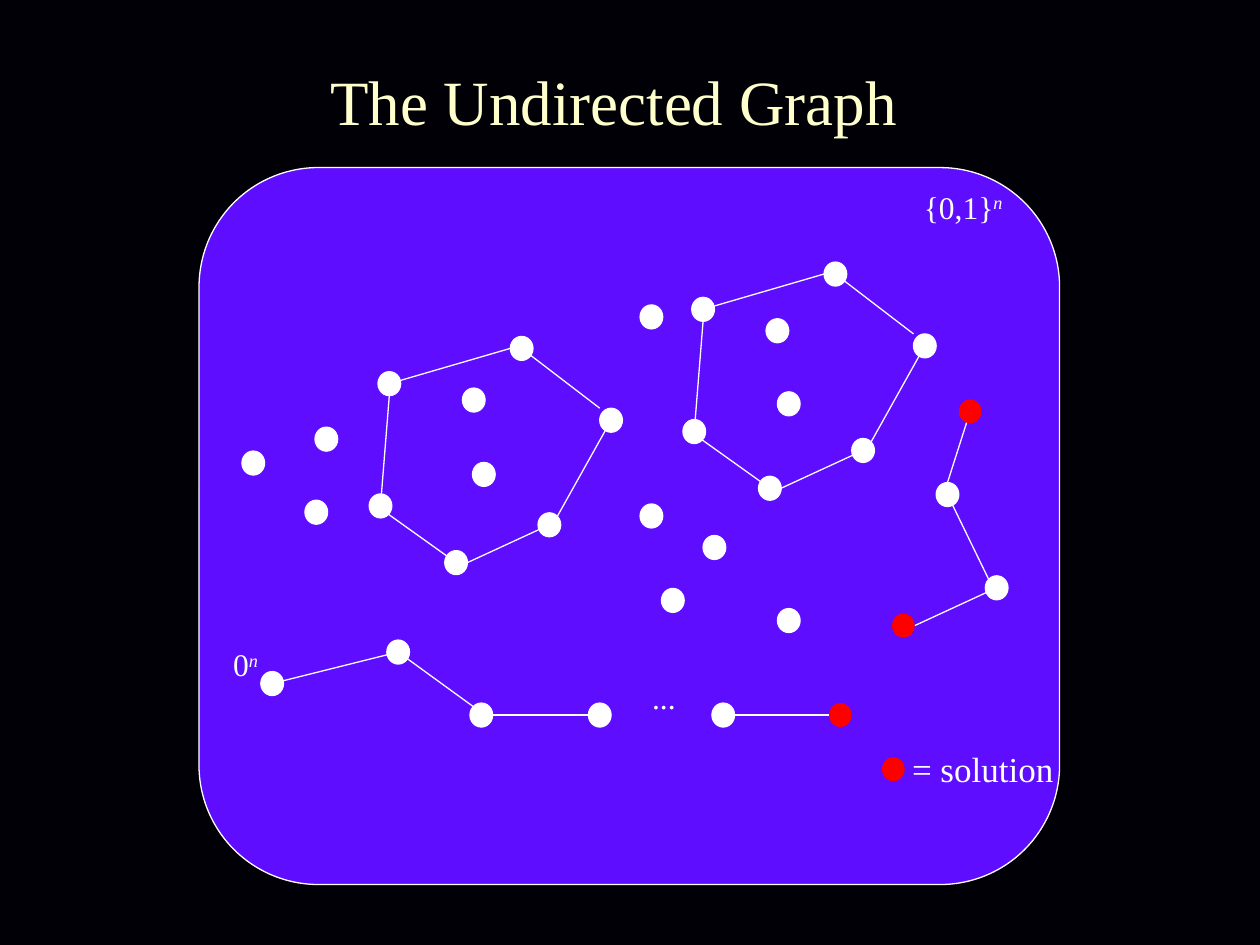
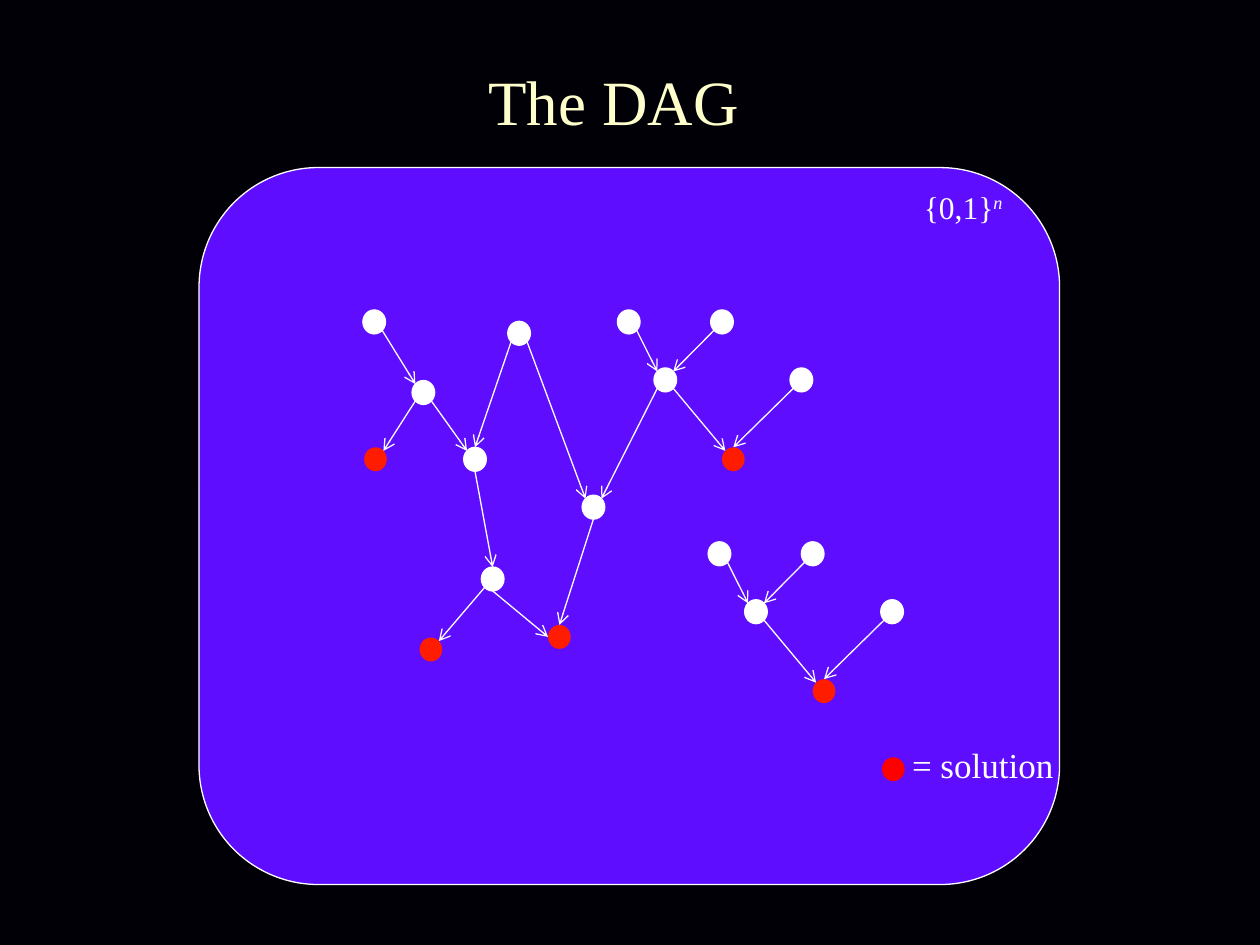
"""Build two slides that show search spaces as an undirected graph and as a DAG."""
import dataclasses

import lxml.etree
import pptx
import pptx.dml.color
import pptx.enum.shapes
import pptx.enum.text
import pptx.oxml.ns
import pptx.util

Inches = pptx.util.Inches


@dataclasses.dataclass(frozen=True)
class Theme:
    """Colours, type sizes and measures that the slides share."""
    font: str = "Times New Roman"
    background: str = "010006"
    board: str = "5E0DFF"
    white: str = "FFFFFF"
    title: str = "FFFFCC"
    solution: str = "FF0000"
    sink: str = "FF1C00"
    title_size: int = 36
    legend_size: int = 20
    label_size: int = 18
    line_width: float = 0.75
    node_width: float = 0.18
    node_height: float = 0.19


THEME = Theme()

SITES = {
    "center": (0.5, 0.5), "corner": (0, 0),
    "top": (0.5, 0), "bottom": (0.5, 1), "left": (0, 0.5), "right": (1, 0.5),
    "top left": (0.15, 0.15), "top right": (0.85, 0.15),
    "bottom left": (0.15, 0.85), "bottom right": (0.85, 0.85),
}

CYCLE_NODES = [(3, 2.95), (4.05, 2.67), (4.76, 3.24), (4.27, 4.07), (3.53, 4.37), (2.93, 3.92)]
CYCLE_ENTRIES = ["left", "corner", "top right", "right", "bottom right", "bottom"]
CYCLE_SHIFTS = [(0, 0), (2.49, -0.59)]
LONE_NODES = [
    (5.08, 4), (5.08, 2.42), (1.92, 3.58), (2.5, 3.39), (2.42, 3.97), (3.67, 3.08),
    (3.75, 3.67), (6.08, 2.53), (6.17, 3.11), (5.58, 4.25), (5.25, 4.67), (6.17, 4.83),
]
PATH_NODES = {
    "zero": (2.07, 5.33), "second": (3.07, 5.08), "third": (3.73, 5.58), "fourth": (4.67, 5.58),
    "next to last": (5.65, 5.58), "last": (6.58, 5.58),
    "upper end": (7.61, 3.17), "upper middle": (7.43, 3.83),
    "lower middle": (7.82, 4.57), "lower end": (7.08, 4.87),
}
PATH_EDGES = [
    ("zero", "center", "second", "center"),
    ("second", "center", "third", "top left"),
    ("third", "center", "fourth", "center"),
    ("next to last", "center", "last", "center"),
    ("upper end", "center", "upper middle", "top"),
    ("upper middle", "center", "lower middle", "top left"),
    ("lower middle", "center", "lower end", "right"),
]
PATH_SOLUTIONS = {"last", "upper end", "lower end"}

BRANCH_NODES = {
    "hub": (5.19, 2.92), "right source": (5.64, 2.46), "left source": (4.9, 2.46),
    "far source": (6.27, 2.92), "branch sink": (5.73, 3.55),
}
BRANCH_EDGES = [
    ("right source", "bottom left", "hub", "top right"),
    ("left source", "bottom right", "hub", "top left"),
    ("hub", "bottom right", "branch sink", "top left"),
    ("far source", "bottom left", "branch sink", "top"),
]
BRANCH_SHIFT = (0.72, 1.84)
TREE_NODES = {
    "first source": (2.88, 2.46), "fork": (3.27, 3.02), "left sink": (2.89, 3.55),
    "merge": (3.68, 3.55), "second source": (4.03, 2.55), "join": (4.62, 3.93),
    "lower fork": (3.82, 4.5), "lower sink": (3.33, 5.06), "shared sink": (4.35, 4.96),
}
TREE_EDGES = [
    ("first source", "bottom right", "fork", "top left"),
    ("fork", "bottom left", "left sink", "top right"),
    ("fork", "bottom right", "merge", "top left"),
    ("second source", "bottom left", "merge", "top"),
    ("second source", "bottom right", "join", "top left"),
    ("hub", "bottom left", "join", "top right"),
    ("merge", "bottom", "lower fork", "top"),
    ("join", "bottom", "shared sink", "top"),
    ("lower fork", "bottom", "shared sink", "left"),
    ("lower fork", "bottom left", "lower sink", "top right"),
]
SINKS = {"left sink", "lower sink", "shared sink", "branch sink"}


def rgb(value):
    """Return a colour object for a hexadecimal value."""
    return pptx.dml.color.RGBColor.from_string(value)


def shifted(position, shift):
    """Return a position moved by a shift."""
    return position[0] + shift[0], position[1] + shift[1]


def add_filled_shape(slide, kind, box, fill, outlined=True):
    """Add a flat preset shape, with a thin white outline if asked."""
    shape = slide.shapes.add_shape(kind, *map(Inches, box))
    shape.shadow.inherit = False
    shape.fill.solid()
    shape.fill.fore_color.rgb = rgb(fill)
    if outlined:
        shape.line.color.rgb = rgb(THEME.white)
        shape.line.width = pptx.util.Pt(THEME.line_width)
    else:
        shape.line.fill.background()


def add_node(slide, position, fill=THEME.white):
    """Add a graph node whose box starts at a position."""
    add_filled_shape(slide, pptx.enum.shapes.MSO_SHAPE.OVAL,
                     (*position, THEME.node_width, THEME.node_height),
                     fill, outlined=fill == THEME.white)


def add_text(slide, box, text, size, color=THEME.white, superscript="",
             italic=None, centered=True, middle=False, wrap=True):
    """Add a one-line text box, with an italic superscript if given."""
    frame = slide.shapes.add_textbox(*map(Inches, box)).text_frame
    frame.word_wrap = wrap
    if middle:
        frame.vertical_anchor = pptx.enum.text.MSO_ANCHOR.MIDDLE
    paragraph = frame.paragraphs[0]
    if centered:
        paragraph.alignment = pptx.enum.text.PP_ALIGN.CENTER
    paragraph.font.name = THEME.font
    paragraph.font.size = pptx.util.Pt(size)
    paragraph.font.color.rgb = rgb(color)
    paragraph.font.italic = italic
    paragraph.add_run().text = text
    if superscript:
        run = paragraph.add_run()
        run.text = superscript
        run.font.italic = True
        run._r.get_or_add_rPr().set("baseline", "30000")


def site_point(position, site):
    """Return the point of a named site on a node."""
    across, down = SITES[site]
    return (Inches(position[0] + across * THEME.node_width),
            Inches(position[1] + down * THEME.node_height))


def add_edge(slide, start, end, directed):
    """Add a straight edge between two points, with an arrowhead if directed."""
    connector = slide.shapes.add_connector(
        pptx.enum.shapes.MSO_CONNECTOR.STRAIGHT, *start, *end)
    connector.line.color.rgb = rgb(THEME.white)
    connector.line.width = pptx.util.Pt(THEME.line_width)
    if directed:
        lxml.etree.SubElement(connector.line._get_or_add_ln(),
                              pptx.oxml.ns.qn("a:tailEnd"), type="arrow")
    lxml.etree.SubElement(connector._element.spPr, pptx.oxml.ns.qn("a:effectLst"))


def add_graph(slide, nodes, edges, solutions=(), solution_color=THEME.solution, directed=False):
    """Draw the edges of a graph and then its nodes."""
    for start, start_site, end, end_site in edges:
        add_edge(slide, site_point(nodes[start], start_site),
                 site_point(nodes[end], end_site), directed)
    for name, position in nodes.items():
        add_node(slide, position, solution_color if name in solutions else THEME.white)


def add_board_slide(presentation, title, legend_top):
    """Add a slide with its title, board, set label and legend."""
    slide = presentation.slides.add_slide(presentation.slide_layouts[6])
    slide.background.fill.solid()
    slide.background.fill.fore_color.rgb = rgb(THEME.background)
    add_text(slide, (0.08, 0.17, 9.58, 1.25), title, THEME.title_size, THEME.title, middle=True)
    add_filled_shape(slide, pptx.enum.shapes.MSO_SHAPE.ROUNDED_RECTANGLE,
                     (1.58, 1.33, 6.83, 5.69), THEME.board)
    add_text(slide, (6.46, 1.44, 2.37, 0.4), "{0,1}", THEME.label_size, superscript="n")
    add_node(slide, (7, 6.01), THEME.solution)
    add_text(slide, (7.14, legend_top, 1.33, 0.44), "= solution", THEME.legend_size,
             centered=False, wrap=False)
    return slide


def build_undirected_graph(presentation):
    """Build the slide with cycles, paths and lone nodes."""
    slide = add_board_slide(presentation, "The Undirected Graph", 5.88)
    count = len(CYCLE_NODES)
    cycle_edges = [(index, "center", (index + 1) % count, entry)
                   for index, entry in enumerate(CYCLE_ENTRIES)]
    for shift in CYCLE_SHIFTS:
        cycle = {index: shifted(node, shift) for index, node in enumerate(CYCLE_NODES)}
        add_graph(slide, cycle, cycle_edges)
    add_graph(slide, PATH_NODES, PATH_EDGES, PATH_SOLUTIONS)
    for position in LONE_NODES:
        add_node(slide, position)
    add_text(slide, (4.75, 5.33, 1.05, 0.4), "...", THEME.label_size, italic=True)
    add_text(slide, (1.67, 5.07, 0.56, 0.4), "0", THEME.label_size, superscript="n")


def build_dag(presentation):
    """Build the slide with the directed acyclic graph."""
    slide = add_board_slide(presentation, "The DAG", 5.85)
    small_branch = {name: shifted(node, BRANCH_SHIFT) for name, node in BRANCH_NODES.items()}
    add_graph(slide, {**TREE_NODES, **BRANCH_NODES}, TREE_EDGES + BRANCH_EDGES,
              SINKS, THEME.sink, directed=True)
    add_graph(slide, small_branch, BRANCH_EDGES, SINKS, THEME.sink, directed=True)


def main():
    """Create and save the presentation."""
    presentation = pptx.Presentation()
    presentation.slide_width = Inches(10)
    presentation.slide_height = Inches(7.5)
    build_undirected_graph(presentation)
    build_dag(presentation)
    presentation.save("out.pptx")


if __name__ == "__main__":
    main()
